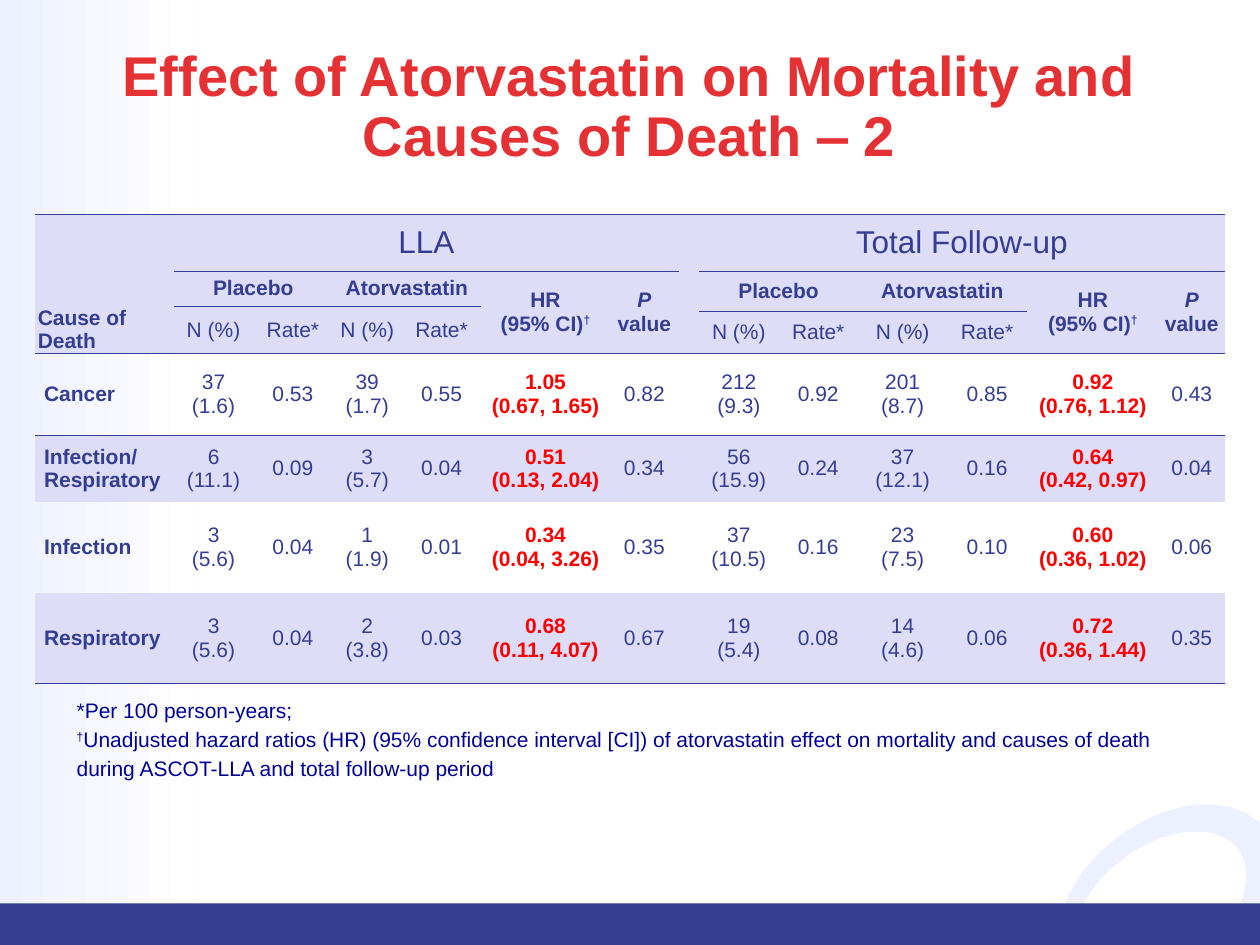
"""Build a slide with a table of mortality and causes of death."""
from lxml.etree import SubElement as Sub
from pptx import Presentation
from pptx.dml.color import RGBColor as Rgb
from pptx.enum.shapes import MSO_SHAPE as Kind
from pptx.enum.text import MSO_ANCHOR as Anchor, PP_ALIGN as Align
from pptx.oxml import parse_xml
from pptx.oxml.ns import nsdecls, qn
from pptx.util import Inches, Pt

HUE = {"navy": "353D92", "pale": "EDF0FF", "band": "DDDDF7", "title": "E53134",
       "red": "FF0000", "note": "000099", "white": "FFFFFF"}
PLAIN = "{2D5ABB26-0587-4C30-8999-92F81FD0307C}"
COLS = [1.1, 0.63, 0.63, 0.55, 0.63, 1.02, 0.55, 0.16,
        0.63, 0.63, 0.71, 0.63, 1.05, 0.52]
ROWS = [0.45, 0.28, 0.04, 0.33, 0.65, 0.53, 0.72, 0.72]
HEAD = 4
GAP = 7
DATA = [
    ("Cancer",
     ("37 (1.6)", "0.53", "39 (1.7)", "0.55", "1.05 (0.67, 1.65)", "0.82"),
     ("212 (9.3)", "0.92", "201 (8.7)", "0.85", "0.92 (0.76, 1.12)", "0.43")),
    ("Infection/ Respiratory",
     ("6 (11.1)", "0.09", "3 (5.7)", "0.04", "0.51 (0.13, 2.04)", "0.34"),
     ("56 (15.9)", "0.24", "37 (12.1)", "0.16", "0.64 (0.42, 0.97)", "0.04")),
    ("Infection",
     ("3 (5.6)", "0.04", "1 (1.9)", "0.01", "0.34 (0.04, 3.26)", "0.35"),
     ("37 (10.5)", "0.16", "23 (7.5)", "0.10", "0.60 (0.36, 1.02)", "0.06")),
    ("Respiratory",
     ("3 (5.6)", "0.04", "2 (3.8)", "0.03", "0.68 (0.11, 4.07)", "0.67"),
     ("19 (5.4)", "0.08", "14 (4.6)", "0.06", "0.72 (0.36, 1.44)", "0.35")),
]
NOTES = ["*Per 100 person-years;",
         "Unadjusted hazard ratios (HR) (95% confidence interval [CI]) of "
         "atorvastatin effect on mortality and causes of death during "
         "ASCOT-LLA and total follow-up period"]


def color(name):
    """Return the named colour."""
    return Rgb.from_string(HUE[name])


def style(run, size, hue, bold=False):
    """Format one run."""
    font = run.font
    font.name, font.size, font.bold = "Arial", Pt(size), bold
    font.color.rgb = color(hue)


def inset(box, side):
    """Set the side margins and clear the top and bottom ones."""
    box.margin_left = box.margin_right = Inches(side)
    box.margin_top = box.margin_bottom = 0


def dagger(para, size, hue, bold=False):
    """Add a raised dagger to a paragraph."""
    run = para.add_run()
    run.text = "†"
    style(run, size, hue, bold)
    run.font._element.set("baseline", "30000")


def decor(slide, kind, box, hue, turn=0):
    """Add a plain backdrop shape."""
    shape = slide.shapes.add_shape(kind, *map(Inches, box))
    shape.rotation = turn
    shape.shadow.inherit = False
    shape.fill.solid()
    shape.fill.fore_color.rgb = color(hue)
    shape.line.fill.background()
    return shape


def backdrop(slide):
    """Draw the ring, the side fade and the foot bar."""
    decor(slide, Kind.OVAL, (8.3, 6.51, 1.94, 1.32), "pale", 323.2)
    decor(slide, Kind.OVAL, (8.43, 6.72, 1.55, 0.97), "white", 323.2)
    fade = decor(slide, Kind.RECTANGLE, (0, 0, 1.53, 7.22), "pale").fill
    fade.gradient()
    fade.gradient_angle = 0
    for stop, hue in zip(fade.gradient_stops, ("pale", "white")):
        stop.color.rgb = color(hue)
    decor(slide, Kind.RECTANGLE, (0, 7.17, 10, 0.33), "navy")


def heading(slide):
    """Fill the title and lift it above the backdrop."""
    title = slide.shapes.title
    title.left, title.top = Inches(0.84), Inches(0.38)
    title.width, title.height = Inches(8.31), Inches(0.46)
    frame = title.text_frame
    frame.text = "Effect of Atorvastatin on Mortality and Causes of Death ‒ 2"
    frame.word_wrap = True
    frame.vertical_anchor = Anchor.TOP
    inset(frame, 0)
    para = frame.paragraphs[0]
    para.alignment, para.line_spacing = Align.CENTER, 0.9
    style(para.runs[0], 32, "title", True)
    slide.shapes._spTree.append(title._element)


def put(cell, text, size=12, hue="navy", bold=False, align=Align.CENTER, side=0.02):
    """Write formatted text in a cell."""
    cell.text_frame.text = text
    inset(cell, side)
    for para in cell.text_frame.paragraphs:
        para.alignment = align
        for run in para.runs:
            style(run, size, hue, bold)


def rule(table, row, first, last):
    """Draw a line above the given row, from first to last column."""
    for col in range(first, last + 1):
        for tag, line in (("lnB", row - 1), ("lnT", row)):
            if 0 <= line < len(ROWS):
                props = table.cell(line, col)._tc.get_or_add_tcPr()
                edge = parse_xml(
                    f'<a:{tag} {nsdecls("a")} w="3175"><a:solidFill>'
                    f'<a:srgbClr val="{HUE["navy"]}"/></a:solidFill></a:{tag}>')
                spot = len(props.findall(qn("a:lnT"))) if tag == "lnB" else 0
                props.insert(spot, edge)


def grid(slide):
    """Add the bare table with its bands and lines."""
    table = slide.shapes.add_table(len(ROWS), len(COLS), *map(
        Inches, (0.28, 1.7, sum(COLS), sum(ROWS)))).table
    table._tbl.tblPr.find(qn("a:tableStyleId")).text = PLAIN
    for col, width in zip(table.columns, COLS):
        col.width = Inches(width)
    for num, (row, height) in enumerate(zip(table.rows, ROWS)):
        row.height = Inches(height)
        for cell in row.cells:
            inset(cell, 0)
            cell.vertical_anchor = Anchor.MIDDLE
            Sub(cell.text_frame.paragraphs[0]._p, qn("a:endParaRPr"), sz="100")
            if num < HEAD or num % 2:
                cell.fill.solid()
                cell.fill.fore_color.rgb = color("band")
            else:
                cell.fill.background()
    for row in (0, HEAD, len(ROWS)):
        rule(table, row, 0, len(COLS) - 1)
    return table


def header(table, name, left, split):
    """Write one half of the header, split above the given row."""
    def join(top, col, low, end):
        cell = table.cell(top, col)
        cell.merge(table.cell(low, end))
        return cell

    put(join(0, left, 0, left + 5), name, 18)
    rule(table, 1, left, left + 5)
    rule(table, split, left, left + 3)
    for col, drug in ((left, "Placebo"), (left + 2, "Atorvastatin")):
        put(join(1, col, split - 1, col + 1), drug, bold=True)
        for step, text in enumerate(("N (%)", "Rate*")):
            put(join(split, col + step, 3, col + step), text)
    ratio = join(1, left + 4, 3, left + 4)
    put(ratio, "HR\n(95% CI)", bold=True)
    dagger(ratio.text_frame.paragraphs[1], 12, "navy", True)
    prob = join(1, left + 5, 3, left + 5)
    put(prob, "P\nvalue", bold=True)
    prob.text_frame.paragraphs[0].runs[0].font.italic = True


def body(table):
    """Write the data rows."""
    for row, (cause, *parts) in enumerate(DATA, HEAD):
        put(table.cell(row, 0), cause.replace(" ", "\n"), bold=True,
            align=Align.LEFT, side=0.07)
        for left, part in zip((1, GAP + 1), parts):
            for step, text in enumerate(part):
                ratio = step == 4
                put(table.cell(row, left + step), text.replace(" ", "\n", 1),
                    hue="red" if ratio else "navy", bold=ratio,
                    side=0 if step > 3 else 0.02)


def notes(slide):
    """Add the footnotes."""
    frame = slide.shapes.add_textbox(*map(
        Inches, (0.51, 5.46, 8.98, 0.82))).text_frame
    frame.word_wrap = True
    for num, text in enumerate(NOTES):
        para = frame.add_paragraph() if num else frame.paragraphs[0]
        para.line_spacing = 1.14
        if num:
            dagger(para, 12, "note")
        run = para.add_run()
        run.text = text
        style(run, 12, "note")


def main():
    """Build and save the slide."""
    deck = Presentation()
    deck.slide_width, deck.slide_height = Inches(10), Inches(7.5)
    slide = deck.slides.add_slide(deck.slide_layouts[5])
    backdrop(slide)
    heading(slide)
    table = grid(slide)
    put(table.cell(2, 0), "Cause of\nDeath", bold=True, align=Align.LEFT)
    table.cell(2, 0).merge(table.cell(3, 0))
    table.cell(1, GAP).merge(table.cell(3, GAP))
    header(table, "LLA", 1, 2)
    header(table, "Total Follow-up", GAP + 1, 3)
    body(table)
    notes(slide)
    deck.save("out.pptx")


if __name__ == "__main__":
    main()
